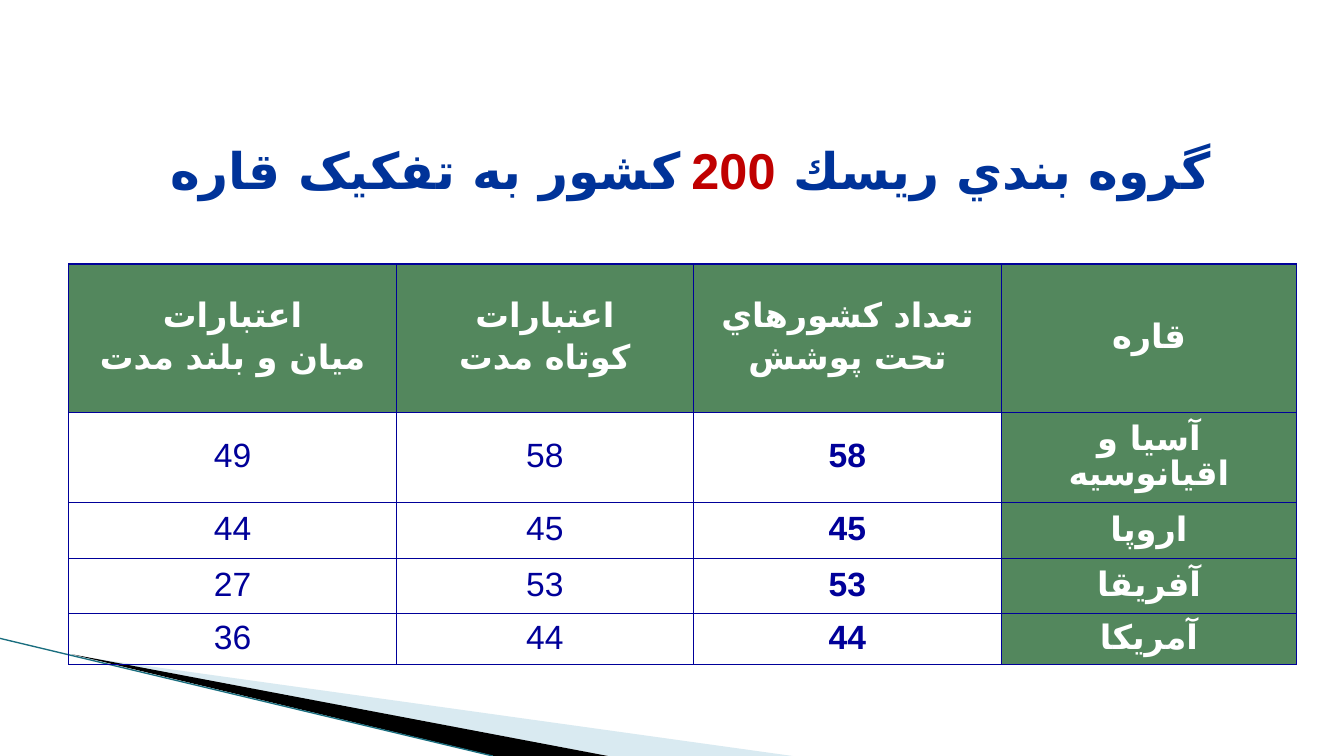
from lxml import etree
from pptx import Presentation
from pptx.dml.color import RGBColor
from pptx.enum.shapes import MSO_CONNECTOR
from pptx.enum.text import MSO_ANCHOR, MSO_AUTO_SIZE, PP_ALIGN
from pptx.oxml.ns import qn
from pptx.util import Pt

CENTER = PP_ALIGN.CENTER
MIDDLE = MSO_ANCHOR.MIDDLE
GROW = MSO_AUTO_SIZE.SHAPE_TO_FIT_TEXT
STRAIGHT = MSO_CONNECTOR.STRAIGHT

WHITE = RGBColor(0xFF, 0xFF, 0xFF)
BLACK = RGBColor(0, 0, 0)
GREEN = RGBColor(0x53, 0x87, 0x5D)
NAVY = RGBColor(0, 0, 0x99)
BLUE = RGBColor(0, 0x33, 0x99)
RED = RGBColor(0xC0, 0, 0)
PALE = RGBColor(0xA0, 0xCB, 0xDC)
TEAL = RGBColor(0x1A, 0x6E, 0x7F)

MONO = "Noto Sans Mono"
ARABIC = "DejaVu Sans"
TITLE = [
    ("گروه بندي ريسك ", 36, MONO, BLUE, ARABIC),
    ("200", 36, "Arial", RED, "Arial"),
    (" ", 30, "Times New Roman", RED, "Times New Roman"),
    ("كشور به تفکیک قاره", 36, MONO, BLUE, ARABIC),
]
ROWS = [
    ["اعتبارات\nميان و بلند مدت", "اعتبارات\nكوتاه مدت",
     "تعداد كشورهاي\nتحت پوشش", "قاره"],
    ["49", "58", "58", "آسيا و اقيانوسيه"],
    ["44", "45", "45", "اروپا"],
    ["27", "53", "53", "آفريقا"],
    ["36", "44", "44", "آمريكا"],
]
WIDTHS = [234.2, 212, 220.2, 210.6]
HEIGHTS = [105.8, 64.8, 39.6, 39.6, 36]


def set_font(run, size, name, color, script, bold=True):
    """Format a run for both Latin and Arabic script."""
    font = run.font
    font.size, font.name, font.bold = Pt(size), name, bold
    font.color.rgb = color
    face = etree.SubElement(run._r.get_or_add_rPr(), qn("a:cs"))
    face.set("typeface", script)


def add_wedge(slide, points, color, alpha=100):
    """Draw a filled outline without a border."""
    start, *rest = [(Pt(x), Pt(y)) for x, y in points]
    form = slide.shapes.build_freeform(*start)
    form.add_line_segments(rest, close=True)
    wedge = form.convert_to_shape()
    wedge.shadow.inherit = False
    wedge.fill.solid()
    wedge.fill.fore_color.rgb = color
    wedge.line.fill.background()
    if alpha < 100:
        tint = wedge._element.spPr.find(".//" + qn("a:srgbClr"))
        etree.SubElement(tint, qn("a:alpha")).set("val", str(alpha * 1000))


def add_line(slide, start, end, color, width):
    """Draw a straight line without a shadow."""
    ends = [Pt(n) for n in (*start, *end)]
    line = slide.shapes.add_connector(STRAIGHT, *ends)
    line.line.color.rgb = color
    line.line.width = Pt(width)
    etree.SubElement(line._element.spPr, qn("a:effectLst"))


def fill_title(title):
    """Place the title and write its coloured runs from right to left."""
    title.left, title.top = Pt(117.4), Pt(77.8)
    title.width, title.height = Pt(751.7), Pt(68.4)
    frame = title.text_frame
    frame.auto_size, frame.word_wrap = GROW, True
    frame.vertical_anchor = MIDDLE
    frame.margin_left = frame.margin_right = 0
    frame.margin_top = frame.margin_bottom = Pt(3.6)
    para = frame.paragraphs[0]
    para.alignment, para.line_spacing = CENTER, 1.4
    para.space_before = Pt(18)
    para._p.get_or_add_pPr().set("rtl", "1")
    for text, *style in TITLE:
        run = para.add_run()
        run.text = text
        set_font(run, *style)


def add_border(cell, color, width):
    """Outline a cell on its four sides."""
    props = cell._tc.get_or_add_tcPr()
    for spot, side in enumerate(("lnL", "lnR", "lnT", "lnB")):
        edge = etree.Element(qn("a:" + side), w=str(Pt(width)))
        fill = etree.SubElement(edge, qn("a:solidFill"))
        etree.SubElement(fill, qn("a:srgbClr")).set("val", str(color))
        props.insert(spot, edge)


def fill_cell(cell, text, head, bold):
    """Write one table cell in heading or value style."""
    cell.vertical_anchor = MIDDLE
    cell.margin_left = cell.margin_right = Pt(9.4)
    cell.margin_top = cell.margin_bottom = Pt(3.6)
    if head:
        cell.fill.solid()
        cell.fill.fore_color.rgb = GREEN
    else:
        cell.fill.background()
    add_border(cell, NAVY, 1)
    cell.text_frame.text = text
    ink = WHITE if head else NAVY
    for para in cell.text_frame.paragraphs:
        para.alignment, para.line_spacing = CENTER, 0.9
        para.space_before = Pt(4.8)
        set_font(para.runs[0], 24, "Arial", ink, ARABIC, bold)


def add_grid(slide):
    """Add the table of risk groups by continent."""
    frame = slide.shapes.add_table(
        len(ROWS), len(WIDTHS), Pt(49), Pt(188.6),
        Pt(sum(WIDTHS)), Pt(sum(HEIGHTS)))
    table = frame.table
    table.first_row = table.horz_banding = False
    for col, width in zip(table.columns, WIDTHS):
        col.width = Pt(width)
    for row, height in zip(table.rows, HEIGHTS):
        row.height = Pt(height)
    last = len(WIDTHS) - 1
    for r, texts in enumerate(ROWS):
        for c, text in enumerate(texts):
            head = r == 0 or c == last
            fill_cell(table.cell(r, c), text, head, head or c == last - 1)


def main():
    """Build the slide and save it."""
    deck = Presentation()
    deck.slide_width, deck.slide_height = Pt(960), Pt(540)
    slide = deck.slides.add_slide(deck.slide_layouts[5])
    add_wedge(slide, [(52.6, 468.4), (566, 540), (434.3, 540)], PALE, 40)
    add_wedge(slide, [(51.1, 467.3), (434.3, 540), (353, 540)], BLACK)
    add_line(slide, (0, 456), (352, 540), TEAL, 0.95)
    fill_title(slide.shapes.title)
    add_grid(slide)
    deck.save("out.pptx")


if __name__ == "__main__":
    main()
